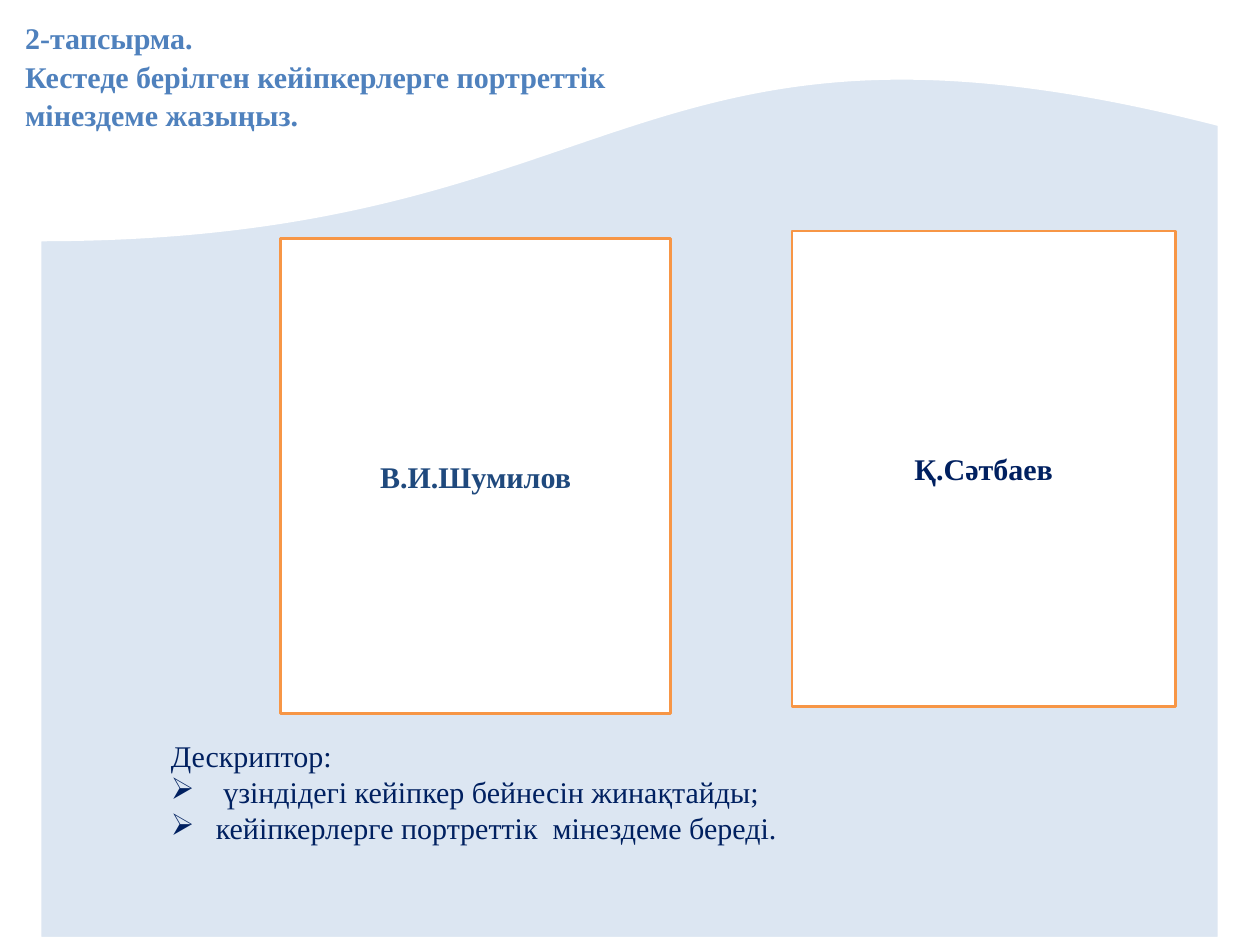
import pptx
import pptx.util
from lxml import etree
from pptx.dml.color import RGBColor
from pptx.enum.shapes import MSO_SHAPE
from pptx.enum.text import MSO_ANCHOR, PP_ALIGN
from pptx.oxml.ns import qn

Pt = pptx.util.Pt

FONT = "Times New Roman"
TEXT_SIZE = 24
COLORS = {
    "white": "FFFFFF",
    "wave": "DCE6F2",
    "border": "F79646",
    "title": "4F81BD",
    "navy": "002060",
    "blue": "1F497D",
}

TITLE = [
    "2-тапсырма.",
    "Кестеде берілген кейіпкерлерге портреттік ",
    "мінездеме жазыңыз. ",
]
DESCRIPTOR_HEADING = "Дескриптор:"
DESCRIPTORS = [
    " үзіндідегі кейіпкер бейнесін жинақтайды;",
    "кейіпкерлерге портреттік  мінездеме береді.",
]
# Name, text colour, (left, top, width, height)
CARDS = [
    ("Қ.Сәтбаев", "navy", (633.6, 185, 306.7, 380.2)),
    ("В.И.Шумилов", "blue", (224.6, 190.8, 311.8, 380.2)),
]
WAVE_AREA = (31.7, 53.3, 943.9, 697.7)
TITLE_AREA = (13, 10.1, 844.6, 100.8)
DESCRIPTOR_AREA = (129.6, 586.8, 504, 95)
BULLET_INDENT = 36


def rgb(name):
    return RGBColor.from_string(COLORS[name])


def add_panel(page, kind, area, fill, line, line_width):
    panel = page.shapes.add_shape(kind, *map(Pt, area))
    panel.shadow.inherit = False
    panel.fill.solid()
    panel.fill.fore_color.rgb = rgb(fill)
    panel.line.color.rgb = rgb(line)
    panel.line.width = Pt(line_width)
    return panel


def write(frame, lines, color, align, bold=False, spacing=1.0):
    frame.word_wrap = True
    frame.text = "\n".join(lines)
    for para in frame.paragraphs:
        para.alignment = align
        para.line_spacing = spacing
        for span in para.runs:
            span.font.name = FONT
            span.font.size = Pt(TEXT_SIZE)
            span.font.bold = bold
            span.font.color.rgb = rgb(color)


def add_arrow_bullet(para):
    properties = para._p.get_or_add_pPr()
    properties.set("marL", str(Pt(BULLET_INDENT)))
    properties.set("indent", str(-Pt(BULLET_INDENT)))
    etree.SubElement(properties, qn("a:buFont")).set("typeface", "Wingdings")
    etree.SubElement(properties, qn("a:buChar")).set("char", "Ø")


def main():
    deck = pptx.Presentation()
    deck.slide_width, deck.slide_height = Pt(1008), Pt(756)
    page = deck.slides.add_slide(deck.slide_layouts[6])

    wave = add_panel(page, MSO_SHAPE.FLOWCHART_DOCUMENT, WAVE_AREA, "wave", "white", 3)
    wave.rotation = 180

    title = page.shapes.add_textbox(*map(Pt, TITLE_AREA))
    write(title.text_frame, TITLE, "title", PP_ALIGN.JUSTIFY, bold=True, spacing=1.07)

    for name, color, area in CARDS:
        card = add_panel(page, MSO_SHAPE.RECTANGLE, area, "white", "border", 2)
        card.text_frame.vertical_anchor = MSO_ANCHOR.MIDDLE
        write(card.text_frame, [name], color, PP_ALIGN.CENTER, bold=True)

    descriptor = page.shapes.add_textbox(*map(Pt, DESCRIPTOR_AREA))
    write(descriptor.text_frame, [DESCRIPTOR_HEADING, *DESCRIPTORS], "navy", PP_ALIGN.LEFT)
    for para in descriptor.text_frame.paragraphs[1:]:
        add_arrow_bullet(para)

    deck.save("out.pptx")


if __name__ == "__main__":
    main()
